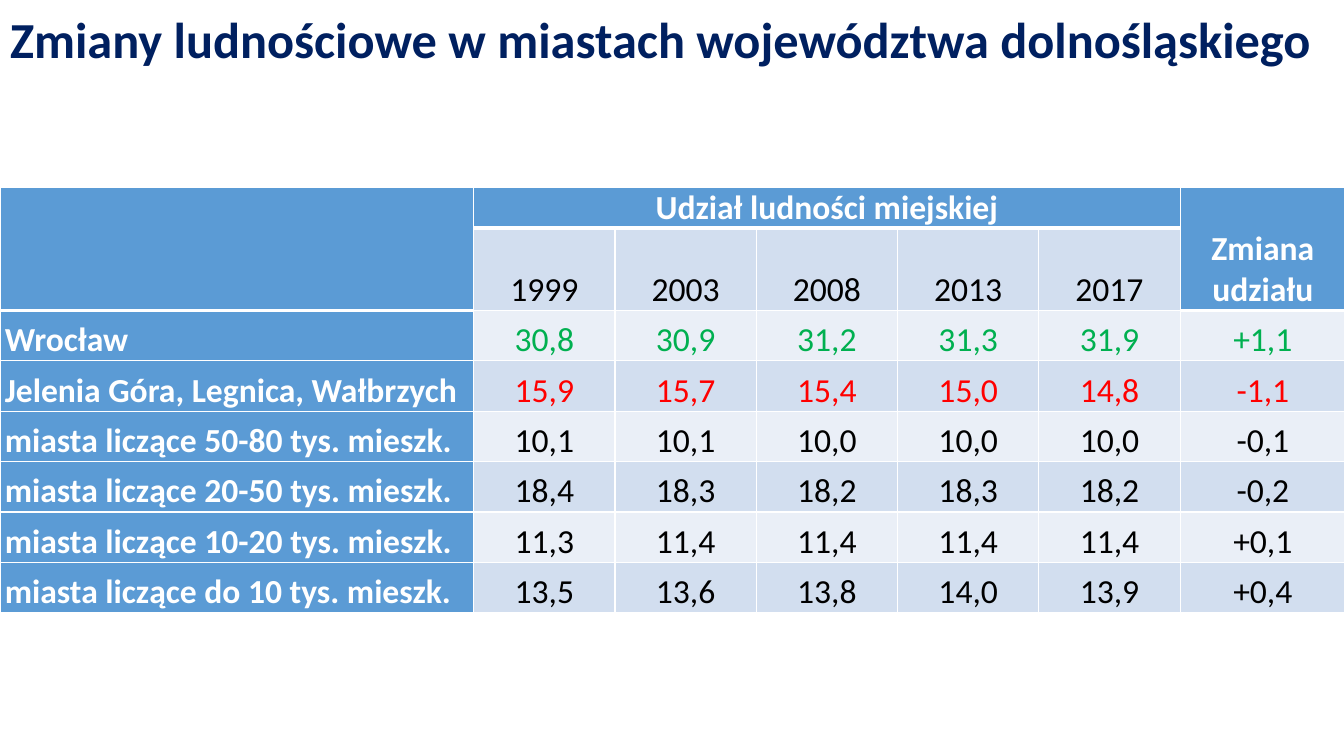
from dataclasses import dataclass

from lxml.etree import SubElement
from pptx import Presentation
from pptx.dml.color import RGBColor
from pptx.enum.text import MSO_ANCHOR, MSO_AUTO_SIZE, PP_ALIGN
from pptx.oxml.ns import qn
from pptx.slide import Slide
from pptx.table import Table, _Cell
from pptx.util import Cm, Pt

NAVY = RGBColor(0x00, 0x20, 0x60)
BLUE = RGBColor(0x5B, 0x9B, 0xD5)
DARK_BAND = RGBColor(0xD2, 0xDE, 0xEF)
LIGHT_BAND = RGBColor(0xEA, 0xEF, 0xF7)
WHITE = RGBColor(0xFF, 0xFF, 0xFF)
BLACK = RGBColor(0x00, 0x00, 0x00)
GREEN = RGBColor(0x00, 0xB0, 0x50)
RED = RGBColor(0xFF, 0x00, 0x00)

FONT = "Calibri"
PAGE_WIDTH = Cm(33.87)
COLUMN_WIDTHS = [Cm(11.94)] + [Cm(3.56)] * 5 + [Cm(4.17)]
ROW_HEIGHTS = [Cm(0.86), Cm(1.02)] + [Cm(1.27)] * 6
LAST_COLUMN = len(COLUMN_WIDTHS) - 1
YEARS = ["1999", "2003", "2008", "2013", "2017"]


@dataclass
class CityGroup:
    name: str
    shares: list[str]
    change: str
    color: RGBColor = BLACK


GROUPS = [
    CityGroup("Wrocław", ["30,8", "30,9", "31,2", "31,3", "31,9"], "+1,1", GREEN),
    CityGroup("Jelenia Góra, Legnica, Wałbrzych", ["15,9", "15,7", "15,4", "15,0", "14,8"], "-1,1", RED),
    CityGroup("miasta liczące 50-80 tys. mieszk.", ["10,1", "10,1", "10,0", "10,0", "10,0"], "-0,1"),
    CityGroup("miasta liczące 20-50 tys. mieszk.", ["18,4", "18,3", "18,2", "18,3", "18,2"], "-0,2"),
    CityGroup("miasta liczące 10-20 tys. mieszk.", ["11,3", "11,4", "11,4", "11,4", "11,4"], "+0,1"),
    CityGroup("miasta liczące do 10 tys. mieszk.", ["13,5", "13,6", "13,8", "14,0", "13,9"], "+0,4"),
]


def add_title(page: Slide, text: str) -> None:
    title = page.shapes.title
    title.left, title.top, title.width, title.height = Cm(0), Cm(0), PAGE_WIDTH, Cm(2.11)
    frame = title.text_frame
    frame.auto_size = MSO_AUTO_SIZE.NONE
    frame.vertical_anchor = MSO_ANCHOR.MIDDLE
    para = frame.paragraphs[0]
    para.alignment = PP_ALIGN.LEFT
    para.line_spacing = 0.9
    span = para.add_run()
    span.text = text
    span.font.name = FONT
    span.font.size = Pt(36)
    span.font.bold = True
    span.font.color.rgb = NAVY


def draw_borders(cell: _Cell, row: int, column: int) -> None:
    header_edge = 2 if column in (0, LAST_COLUMN) else 1
    bottom_edge = row + max(cell.span_height, 1)
    widths = {
        "a:lnL": 1,
        "a:lnR": 1,
        "a:lnT": 3 if row == header_edge else 1,
        "a:lnB": 3 if bottom_edge == header_edge else 1,
    }
    properties = cell._tc.get_or_add_tcPr()
    for tag, width in widths.items():
        line = SubElement(properties, qn(tag), w=str(Pt(width)))
        fill = SubElement(line, qn("a:solidFill"))
        SubElement(fill, qn("a:srgbClr"), val=str(WHITE))


def fill_cell(cell: _Cell, color: RGBColor) -> None:
    cell.fill.solid()
    cell.fill.fore_color.rgb = color


def write_cell(cell: _Cell, text: str, color: RGBColor, bold: bool = False,
               alignment: PP_ALIGN = PP_ALIGN.CENTER, gap: int = 12) -> None:
    cell.vertical_anchor = MSO_ANCHOR.BOTTOM
    cell.margin_left = cell.margin_right = Cm(0.12)
    cell.margin_top = cell.margin_bottom = Cm(0)
    para = cell.text_frame.paragraphs[0]
    para.alignment = alignment
    para.space_before = para.space_after = Pt(gap)
    span = para.add_run()
    span.text = text
    span.font.name = FONT
    span.font.size = Pt(24)
    span.font.bold = bold
    span.font.color.rgb = color


def style_grid(table: Table) -> None:
    for row in range(len(ROW_HEIGHTS)):
        for column in range(len(COLUMN_WIDTHS)):
            cell = table.cell(row, column)
            draw_borders(cell, row, column)
            is_header = row == 0 or column == 0 or (row == 1 and column == LAST_COLUMN)
            band = DARK_BAND if row % 2 else LIGHT_BAND
            fill_cell(cell, BLUE if is_header else band)


def add_share_table(page: Slide) -> None:
    table = page.shapes.add_table(
        len(ROW_HEIGHTS), len(COLUMN_WIDTHS), Cm(0), Cm(4.72), PAGE_WIDTH, sum(ROW_HEIGHTS)
    ).table
    table.first_row = table.horz_banding = False
    for column, width in zip(table.columns, COLUMN_WIDTHS):
        column.width = width
    for row, height in zip(table.rows, ROW_HEIGHTS):
        row.height = height
    for column in (0, LAST_COLUMN):
        table.cell(0, column).merge(table.cell(1, column))
    table.cell(0, 1).merge(table.cell(0, LAST_COLUMN - 1))
    style_grid(table)

    write_cell(table.cell(0, 1), "Udział ludności miejskiej", WHITE, bold=True, gap=0)
    write_cell(table.cell(0, LAST_COLUMN), "Zmiana udziału", WHITE, bold=True)
    for column, year in enumerate(YEARS, start=1):
        write_cell(table.cell(1, column), year, BLACK)
    for row, group in enumerate(GROUPS, start=2):
        write_cell(table.cell(row, 0), group.name, WHITE, bold=True, alignment=PP_ALIGN.LEFT)
        for column, value in enumerate([*group.shares, group.change], start=1):
            write_cell(table.cell(row, column), value, group.color)


def main() -> None:
    deck = Presentation()
    deck.slide_width, deck.slide_height = PAGE_WIDTH, Cm(19.05)
    page = deck.slides.add_slide(deck.slide_layouts.get_by_name("Title Only"))
    add_title(page, "Zmiany ludnościowe w miastach województwa dolnośląskiego")
    add_share_table(page)
    deck.save("out.pptx")


if __name__ == "__main__":
    main()
